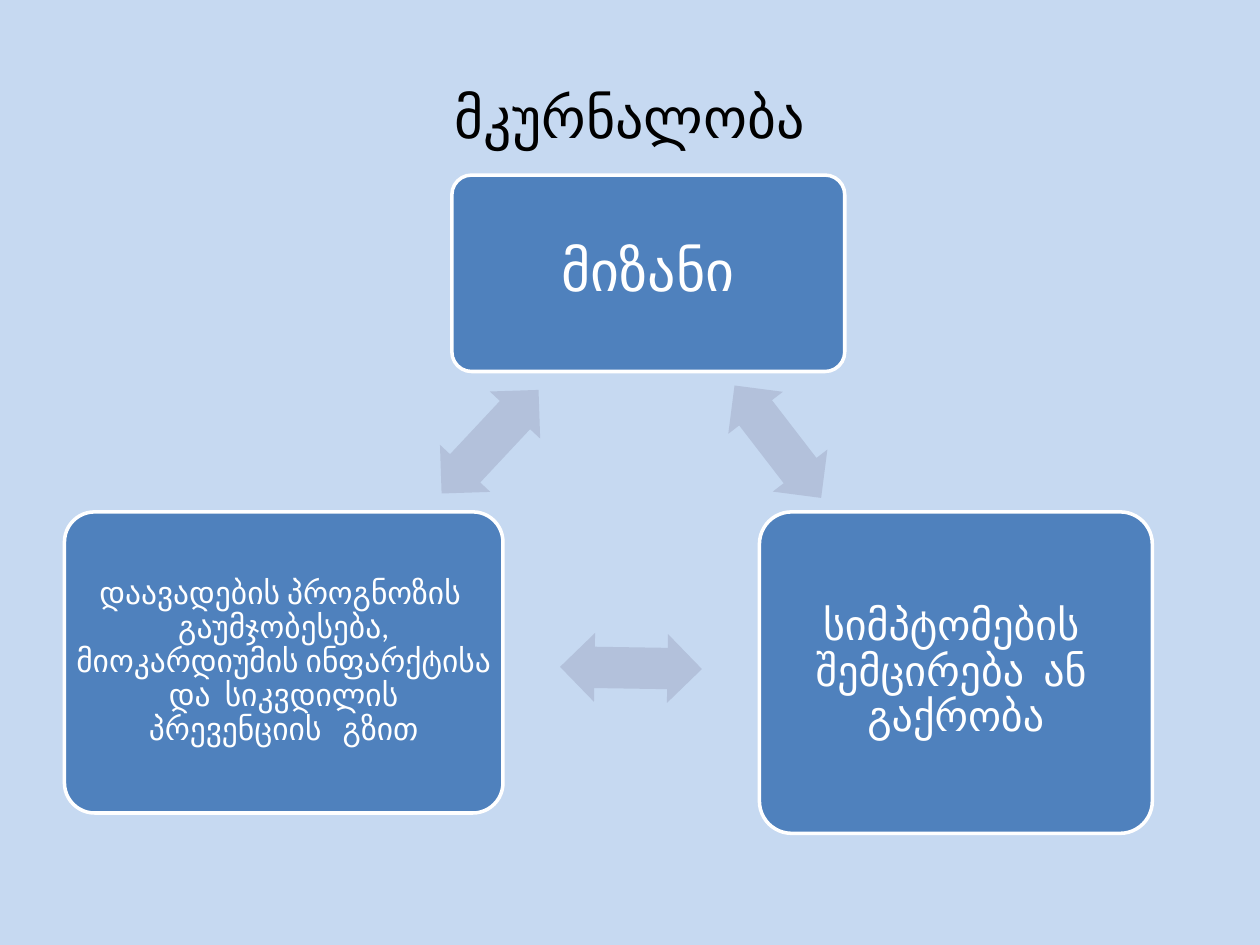
"""Build a slide with the three linked goals of treatment."""
from pptx import Presentation
from pptx.dml.color import RGBColor
from pptx.enum.shapes import MSO_SHAPE
from pptx.enum.text import MSO_ANCHOR, PP_ALIGN
from pptx.util import Cm, Pt

ROUNDED = MSO_SHAPE.ROUNDED_RECTANGLE
DOUBLE_ARROW = MSO_SHAPE.LEFT_RIGHT_ARROW
MIDDLE = MSO_ANCHOR.MIDDLE
CENTER = PP_ALIGN.CENTER
FONT = "Calibri"
COLORS = {
    "background": "C6D9F1",
    "title": "000000",
    "box": "4F81BD",
    "white": "FFFFFF",
    "arrow": "B3C1DB",
}


def color(name):
    return RGBColor.from_string(COLORS[name])


def write(shape, text, size, color_name):
    frame = shape.text_frame
    frame.text = text
    frame.word_wrap = True
    frame.vertical_anchor = MIDDLE
    para = frame.paragraphs[0]
    para.alignment = CENTER
    font = para.runs[0].font
    font.name = FONT
    font.size = Pt(size)
    font.color.rgb = color(color_name)


deck = Presentation()
deck.slide_width, deck.slide_height = Cm(25.4), Cm(19.05)
page = deck.slides.add_slide(deck.slide_layouts[5])
page.background.fill.solid()
page.background.fill.fore_color.rgb = color("background")

title = page.shapes.title
title.left, title.top, title.width, title.height = Cm(1.27), Cm(0.76), Cm(22.86), Cm(3.18)
write(title, "მკურნალობა", 32, "title")

goals = [
    ("მიზანი", 32, 9.11, 3.53, 7.92, 3.96),
    ("სიმპტომების  შემცირება  ან  გაქრობა", 24, 15.31, 10.32, 7.92, 6.48),
    ("დაავადების პროგნოზის  გაუმჯობესება, მიოკარდიუმის ინფარქტისა  და  სიკვდილის  პრევენციის   გზით",
     18, 1.3, 10.32, 8.84, 6.07),
]
for text, size, left, top, width, height in goals:
    box = page.shapes.add_shape(ROUNDED, Cm(left), Cm(top), Cm(width), Cm(height))
    box.adjustments[0] = 0.1
    box.shadow.inherit = False
    box.fill.solid()
    box.fill.fore_color.rgb = color("box")
    box.line.color.rgb = color("white")
    box.line.width = Pt(2)
    write(box, text, size, "white")
    frame = box.text_frame
    frame.margin_left = frame.margin_right = Cm(0)
    frame.margin_top = frame.margin_bottom = Cm(0)
    frame.paragraphs[0].line_spacing = 0.9

for left, top, angle in [(14.25, 8.21, 52.4), (11.29, 12.77, 180.9), (8.45, 8.21, 313.1)]:
    arrow = page.shapes.add_shape(DOUBLE_ARROW, Cm(left), Cm(top), Cm(2.86), Cm(1.39))
    arrow.adjustments[0] = 0.6
    arrow.adjustments[1] = 0.5
    arrow.rotation = angle
    arrow.shadow.inherit = False
    arrow.fill.solid()
    arrow.fill.fore_color.rgb = color("arrow")
    arrow.line.fill.background()

deck.save("out.pptx")
